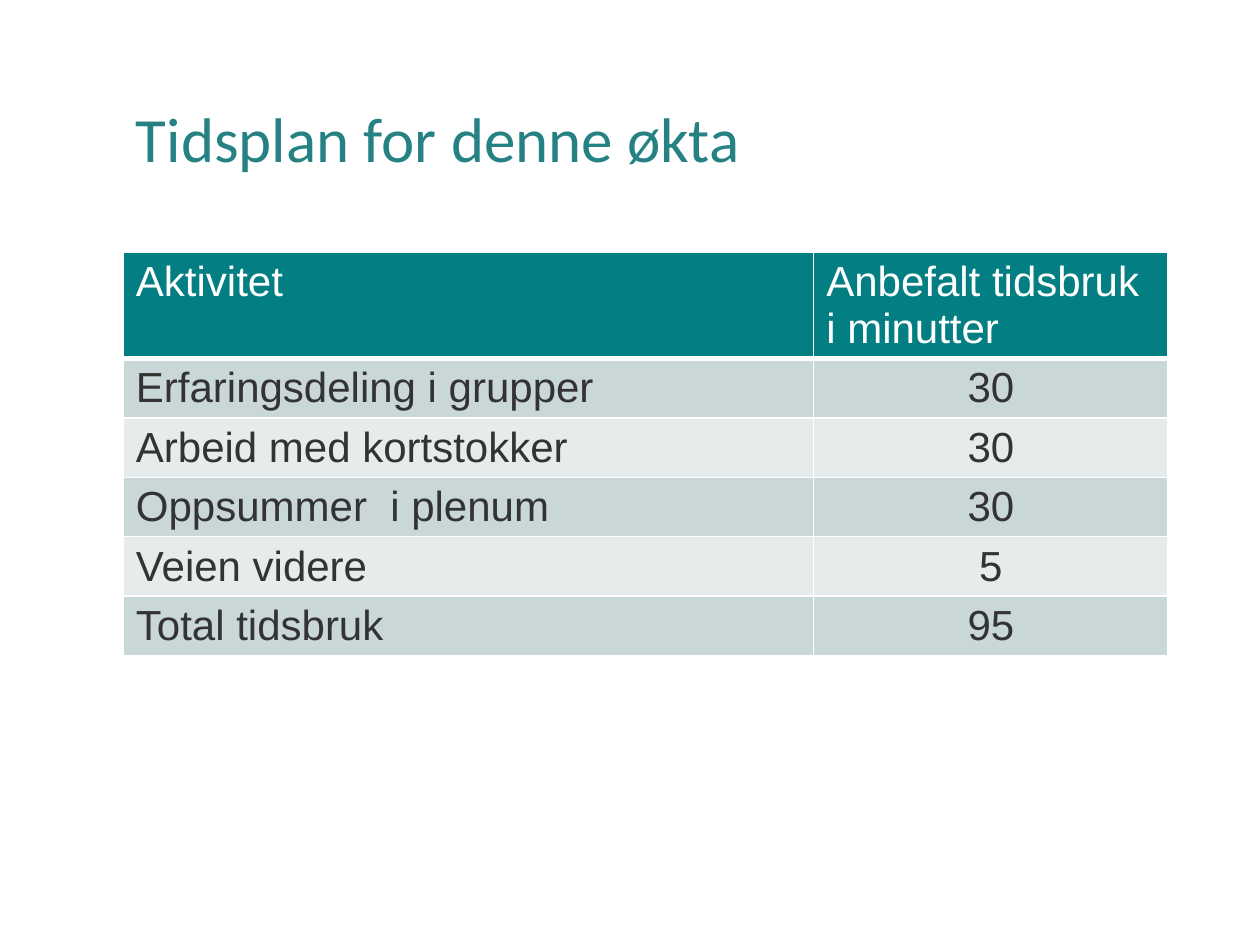
from dataclasses import dataclass

from lxml import etree
from pptx import Presentation
from pptx.dml.color import RGBColor
from pptx.enum import text
from pptx.oxml import ns
from pptx.util import Pt

LEFT, WIDTH = 70.5, 597
COLUMN_WIDTHS = (394.5, 202.5)
HEADER_HEIGHT, ROW_HEIGHT = 60, 34
WHITE, TEAL, DARK_GREY = "FFFFFF", "037F83", "333333"
BANDS = ("CAD7D8", "E6ECEC")


@dataclass
class Activity:
    name: str
    minutes: str


HEADER = Activity("Aktivitet", "Anbefalt tidsbruk i minutter")
ACTIVITIES = [
    Activity("Erfaringsdeling i grupper", "30"),
    Activity("Arbeid med kortstokker", "30"),
    Activity("Oppsummer  i plenum", "30"),
    Activity("Veien videre", "5"),
    Activity("Total tidsbruk", "95"),
]


def color(value: str) -> RGBColor:
    return RGBColor.from_string(value)


def add_run(para, content: str, font: str, size: float, ink: str) -> None:
    span = para.add_run()
    span.text = content
    span.font.name = font
    span.font.size = Pt(size)
    span.font.bold = False
    span.font.color.rgb = color(ink)


def add_border(cell, side: str, width: float) -> None:
    line = etree.SubElement(cell._tc.get_or_add_tcPr(), ns.qn(f"a:ln{side}"), w=str(Pt(width)))
    fill = etree.SubElement(line, ns.qn("a:solidFill"))
    etree.SubElement(fill, ns.qn("a:srgbClr"), val=WHITE)


def fill_cell(cell, content: str, row: int, centred: bool) -> None:
    is_header = row == 0
    # Borders come before the fill in the cell properties
    for side in "LRTB":
        below_header = (row, side) in ((0, "B"), (1, "T"))
        add_border(cell, side, 3 if below_header else 1)
    cell.fill.solid()
    cell.fill.fore_color.rgb = color(TEAL if is_header else BANDS[(row - 1) % 2])
    para = cell.text_frame.paragraphs[0]
    para.alignment = text.PP_ALIGN.CENTER if centred else text.PP_ALIGN.LEFT
    add_run(para, content, "Arial", 24, WHITE if is_header else DARK_GREY)


def add_title(slide, content: str) -> None:
    box = slide.shapes.title
    box.left, box.top, box.width, box.height = Pt(LEFT), Pt(29), Pt(WIDTH), Pt(104)
    frame = box.text_frame
    frame.auto_size = text.MSO_AUTO_SIZE.NONE
    frame.vertical_anchor = text.MSO_ANCHOR.MIDDLE
    para = frame.paragraphs[0]
    para.alignment = text.PP_ALIGN.LEFT
    para.line_spacing = 0.9
    add_run(para, content, "Calibri", 36, "268183")


def add_schedule(slide, entries: list[Activity]) -> None:
    height = HEADER_HEIGHT + ROW_HEIGHT * (len(entries) - 1)
    table = slide.shapes.add_table(
        len(entries), len(COLUMN_WIDTHS), Pt(LEFT), Pt(144), Pt(WIDTH), Pt(height)
    ).table
    for column, width in zip(table.columns, COLUMN_WIDTHS):
        column.width = Pt(width)
    for row, entry in enumerate(entries):
        table.rows[row].height = Pt(ROW_HEIGHT if row else HEADER_HEIGHT)
        fill_cell(table.cell(row, 0), entry.name, row, centred=False)
        fill_cell(table.cell(row, 1), entry.minutes, row, centred=row > 0)


def main() -> None:
    deck = Presentation()
    deck.slide_width, deck.slide_height = Pt(720), Pt(540)
    page = deck.slides.add_slide(deck.slide_layouts[5])
    add_title(page, "Tidsplan for denne økta")
    add_schedule(page, [HEADER, *ACTIVITIES])
    deck.save("out.pptx")


if __name__ == "__main__":
    main()
